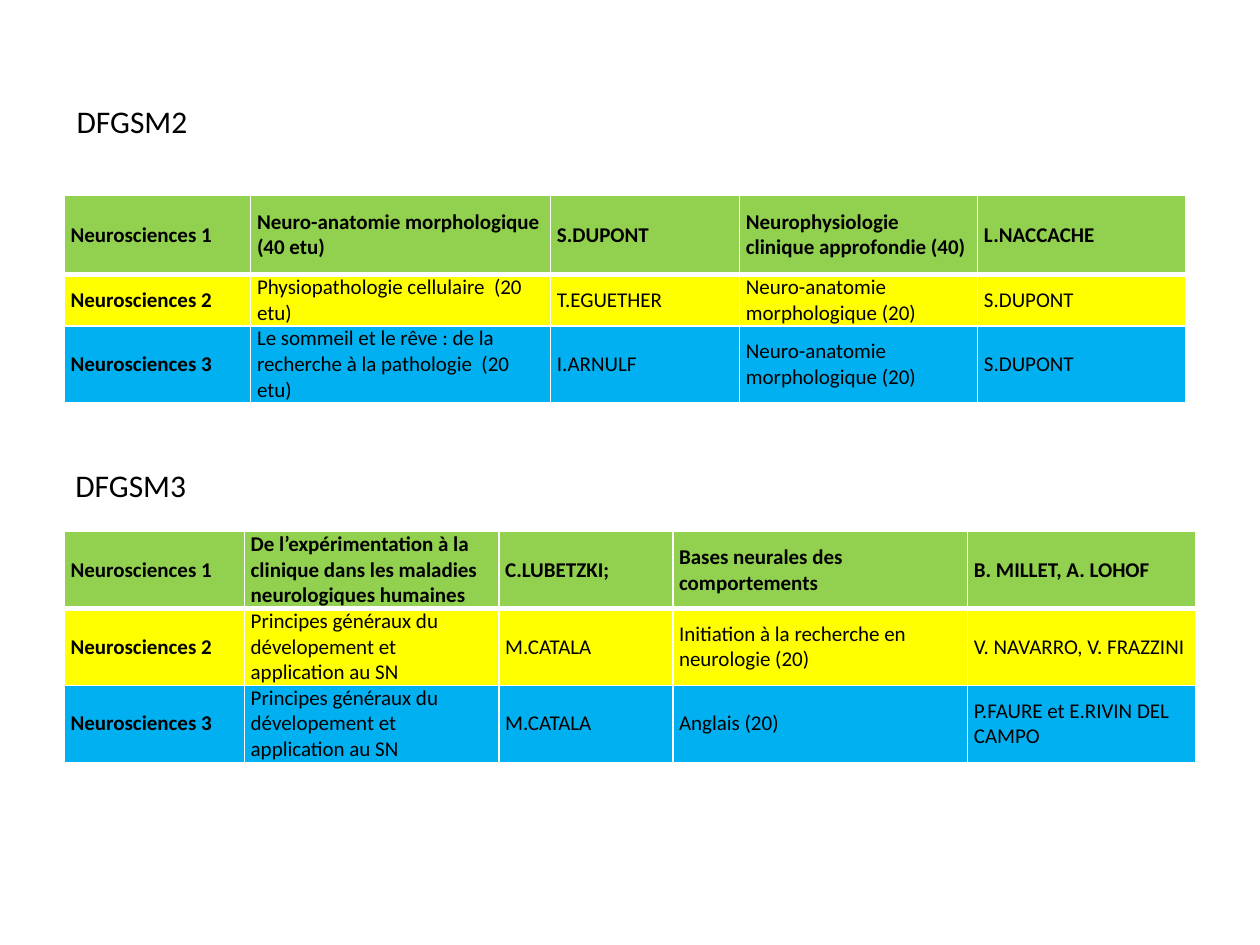
from lxml import etree
from pptx import Presentation
from pptx.dml.color import RGBColor
from pptx.enum.text import MSO_ANCHOR, MSO_AUTO_SIZE
from pptx.oxml.ns import qn
from pptx.util import Inches, Pt

MIDDLE = MSO_ANCHOR.MIDDLE
FIT_SHAPE = MSO_AUTO_SIZE.SHAPE_TO_FIT_TEXT
BLACK = RGBColor(0x00, 0x00, 0x00)
WHITE = RGBColor(0xFF, 0xFF, 0xFF)
GREEN = RGBColor(0x92, 0xD0, 0x50)
YELLOW = RGBColor(0xFF, 0xFF, 0x00)
BLUE = RGBColor(0x00, 0xB0, 0xF0)
ROW_COLORS = (GREEN, YELLOW, BLUE)
HEADER_BORDERS = {"a:lnL": 1, "a:lnR": 1, "a:lnT": 1, "a:lnB": 3}

DFGSM2_COURSES = [
    ["Neurosciences 1", "Neuro-anatomie morphologique (40 etu)", "S.DUPONT",
     "Neurophysiologie clinique approfondie (40)", "L.NACCACHE"],
    ["Neurosciences 2", "Physiopathologie cellulaire  (20 etu)", "T.EGUETHER",
     "Neuro-anatomie morphologique (20)", "S.DUPONT"],
    ["Neurosciences 3", "Le sommeil et le rêve : de la recherche à la pathologie  (20 etu)",
     "I.ARNULF", "Neuro-anatomie morphologique (20)", "S.DUPONT"],
]
DFGSM3_COURSES = [
    ["Neurosciences 1",
     "De l’expérimentation à la clinique dans les maladies neurologiques humaines",
     "C.LUBETZKI;", "Bases neurales des comportements", "B. MILLET, A. LOHOF"],
    ["Neurosciences 2", "Principes généraux du dévelopement et application au SN",
     "M.CATALA", "Initiation à la recherche en neurologie (20)", "V. NAVARRO, V. FRAZZINI"],
    ["Neurosciences 3", "Principes généraux du dévelopement et application au SN",
     "M.CATALA", "Anglais (20)", "P.FAURE et E.RIVIN DEL CAMPO"],
]


def write_text(frame, text, size=12, bold=False, color=BLACK, font="Calibri"):
    run = frame.paragraphs[0].add_run()
    run.text = text
    run.font.size = Pt(size)
    run.font.bold = bold
    run.font.name = font
    run.font.color.rgb = color


def add_year_title(slide, box, text):
    title = slide.shapes.add_textbox(*map(Inches, box))
    title.text_frame.word_wrap = False
    title.text_frame.auto_size = FIT_SHAPE
    write_text(title.text_frame, text, size=18)


def add_header_borders(cell):
    properties = cell._tc.get_or_add_tcPr()
    for tag, width in HEADER_BORDERS.items():
        line = etree.SubElement(properties, qn(tag), w=str(Pt(width)))
        fill = etree.SubElement(line, qn("a:solidFill"))
        etree.SubElement(fill, qn("a:srgbClr"), val=str(WHITE))


def add_course_table(slide, box, courses, widths, heights):
    table = slide.shapes.add_table(len(courses), len(widths), *map(Inches, box)).table
    for column, width in zip(table.columns, widths):
        column.width = Inches(width)
    for row_index, (row, height, course) in enumerate(zip(table.rows, heights, courses)):
        row.height = Inches(height)
        for column_index, (cell, text) in enumerate(zip(row.cells, course)):
            is_header = row_index == 0
            if is_header:
                add_header_borders(cell)
            cell.fill.solid()
            cell.fill.fore_color.rgb = ROW_COLORS[row_index]
            cell.vertical_anchor = MIDDLE
            cell.margin_left = cell.margin_right = Inches(0.05)
            cell.margin_top = cell.margin_bottom = 0
            write_text(cell.text_frame, text, bold=is_header or column_index == 0)


def main():
    deck = Presentation()
    deck.slide_width, deck.slide_height = Inches(10), Inches(7.5)
    slide = deck.slides.add_slide(deck.slide_layouts[6])
    add_course_table(slide, (0.51, 1.55, 8.9, 1.63), DFGSM2_COURSES,
                     (1.48, 2.38, 1.5, 1.89, 1.65), (0.63, 0.31, 0.31))
    add_course_table(slide, (0.51, 4.22, 8.98, 1.8), DFGSM3_COURSES,
                     (1.43, 2.02, 1.38, 2.34, 1.81), (0.47, 0.47, 0.47))
    add_year_title(slide, (0.51, 0.76, 1.15, 0.4), "DFGSM2")
    add_year_title(slide, (0.5, 3.65, 1.15, 0.4), "DFGSM3")
    deck.save("out.pptx")


if __name__ == "__main__":
    main()
